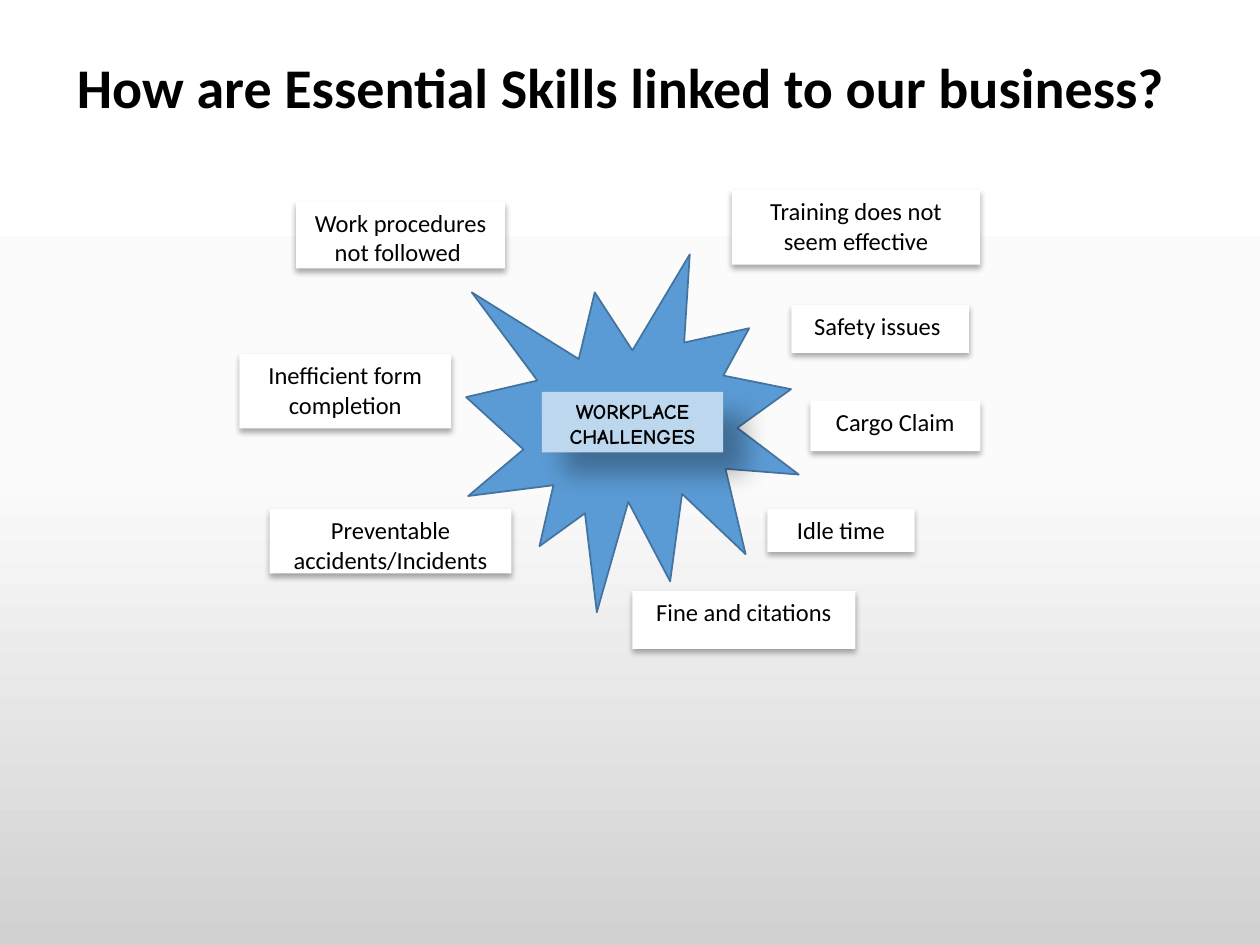
import copy
from dataclasses import dataclass

import lxml.etree
import pptx
import pptx.dml.color
import pptx.enum.shapes
import pptx.enum.text
import pptx.oxml.ns
import pptx.util

Pt = pptx.util.Pt
Shapes = pptx.enum.shapes.MSO_SHAPE
Align = pptx.enum.text.PP_ALIGN
qn = pptx.oxml.ns.qn


@dataclass(frozen=True)
class Shadow:
    opacity: int
    blur: float
    distance: float
    angle: int


@dataclass(frozen=True)
class Theme:
    background: tuple = ("FFFFFF", "FBFBFB", "D1D1D1")
    text: str = "000000"
    card: str = "FFFFFF"
    burst: str = "5B9BD5"
    burst_line: str = "43739E"
    label: str = "BDD7EE"
    font: str = "Calibri"
    label_font: str = "Comic Neue"
    title_size: int = 32
    card_size: int = 14
    label_size: int = 12
    card_shadow: Shadow = Shadow(32, 3.5, 2.2, 90)
    label_shadow: Shadow = Shadow(30, 15, 18, 45)


def rgb(color):
    return pptx.dml.color.RGBColor.from_string(color)


class SlideBuilder:
    def __init__(self, slide, theme):
        self.slide = slide
        self.theme = theme

    def background(self):
        fill = self.slide.background.fill
        fill.gradient()
        fill.gradient_angle = 270
        stop_list = next(self.slide.element.iter(qn("a:gsLst")))
        stop_list.insert(1, copy.deepcopy(stop_list[0]))
        for index, color in enumerate(self.theme.background):
            stop = fill.gradient_stops[index]
            stop.position = index / 2
            stop.color.rgb = rgb(color)

    def add_text(self, shape, text, size, font, bold=False, align=Align.CENTER):
        frame = shape.text_frame
        frame.word_wrap = True
        frame.vertical_anchor = pptx.enum.text.MSO_ANCHOR.TOP
        paragraph = frame.paragraphs[0]
        paragraph.alignment = align
        run = paragraph.add_run()
        run.text = text
        run.font.size = Pt(size)
        run.font.name = font
        run.font.bold = bold
        run.font.color.rgb = rgb(self.theme.text)

    def title(self, text, left, top, width, height):
        shape = self.slide.shapes.title
        shape.left, shape.top = Pt(left), Pt(top)
        shape.width, shape.height = Pt(width), Pt(height)
        shape.text_frame.auto_size = pptx.enum.text.MSO_AUTO_SIZE.NONE
        self.add_text(shape, text, self.theme.title_size, self.theme.font,
                      bold=True, align=Align.LEFT)

    def shape(self, kind, box, fill, line=None, shadow=None):
        shape = self.slide.shapes.add_shape(kind, *map(Pt, box))
        shape.fill.solid()
        shape.fill.fore_color.rgb = rgb(fill)
        if line:
            shape.line.color.rgb = rgb(line)
            shape.line.width = Pt(1)
        else:
            shape.line.fill.background()
        shape.shadow.inherit = False
        if shadow:
            self.add_shadow(shape, shadow)
        return shape

    def add_shadow(self, shape, shadow):
        effects = shape.element.spPr.find(qn("a:effectLst"))
        outer = lxml.etree.SubElement(
            effects, qn("a:outerShdw"), blurRad=str(Pt(shadow.blur)),
            dist=str(Pt(shadow.distance)), dir=str(shadow.angle * 60000),
            algn="tl", rotWithShape="0")
        color = lxml.etree.SubElement(outer, qn("a:srgbClr"), val="000000")
        lxml.etree.SubElement(color, qn("a:alpha"), val=str(shadow.opacity * 1000))

    def burst(self, *box):
        self.shape(Shapes.EXPLOSION1, box, self.theme.burst, self.theme.burst_line)

    def label(self, text, *box):
        shape = self.shape(Shapes.RECTANGLE, box, self.theme.label,
                           shadow=self.theme.label_shadow)
        self.add_text(shape, text, self.theme.label_size, self.theme.label_font,
                      bold=True)

    def card(self, text, *box):
        shape = self.shape(Shapes.RECTANGLE, box, self.theme.card,
                           shadow=self.theme.card_shadow)
        self.add_text(shape, text, self.theme.card_size, self.theme.font)


# Challenge text, then left, top, width, height
CHALLENGES = [
    ("Training does not seem effective", 418.3, 108.7, 141.8, 42.5),
    ("Cargo Claim", 463, 229, 97.2, 28.8),
    ("Safety issues ", 452.2, 174.2, 101.5, 27.4),
    ("Work procedures not followed ", 169.2, 115.2, 119.5, 38.2),
    ("Inefficient form completion", 136.8, 202.3, 121, 42.5),
    ("Preventable accidents/Incidents", 154.1, 290.9, 138.2, 36.7),
    ("Fine and citations", 361.4, 337.7, 127.4, 33.1),
    ("Idle time", 438.5, 290.9, 84.2, 24.5),
]


def main():
    presentation = pptx.Presentation()
    presentation.slide_width, presentation.slide_height = Pt(720), Pt(540)
    slide = presentation.slides.add_slide(presentation.slide_layouts[5])
    builder = SlideBuilder(slide, Theme())

    # Background and title
    builder.background()
    builder.title("How are Essential Skills linked to our business?",
                  36.7, 26.6, 644.4, 46.1)

    # Central burst with its label
    builder.burst(266.4, 145.4, 190.1, 204.5)
    builder.label("WORKPLACE CHALLENGES", 309.6, 223.9, 103.7, 34.6)

    # Challenges around the burst
    for challenge in CHALLENGES:
        builder.card(*challenge)

    presentation.save("out.pptx")


if __name__ == "__main__":
    main()
